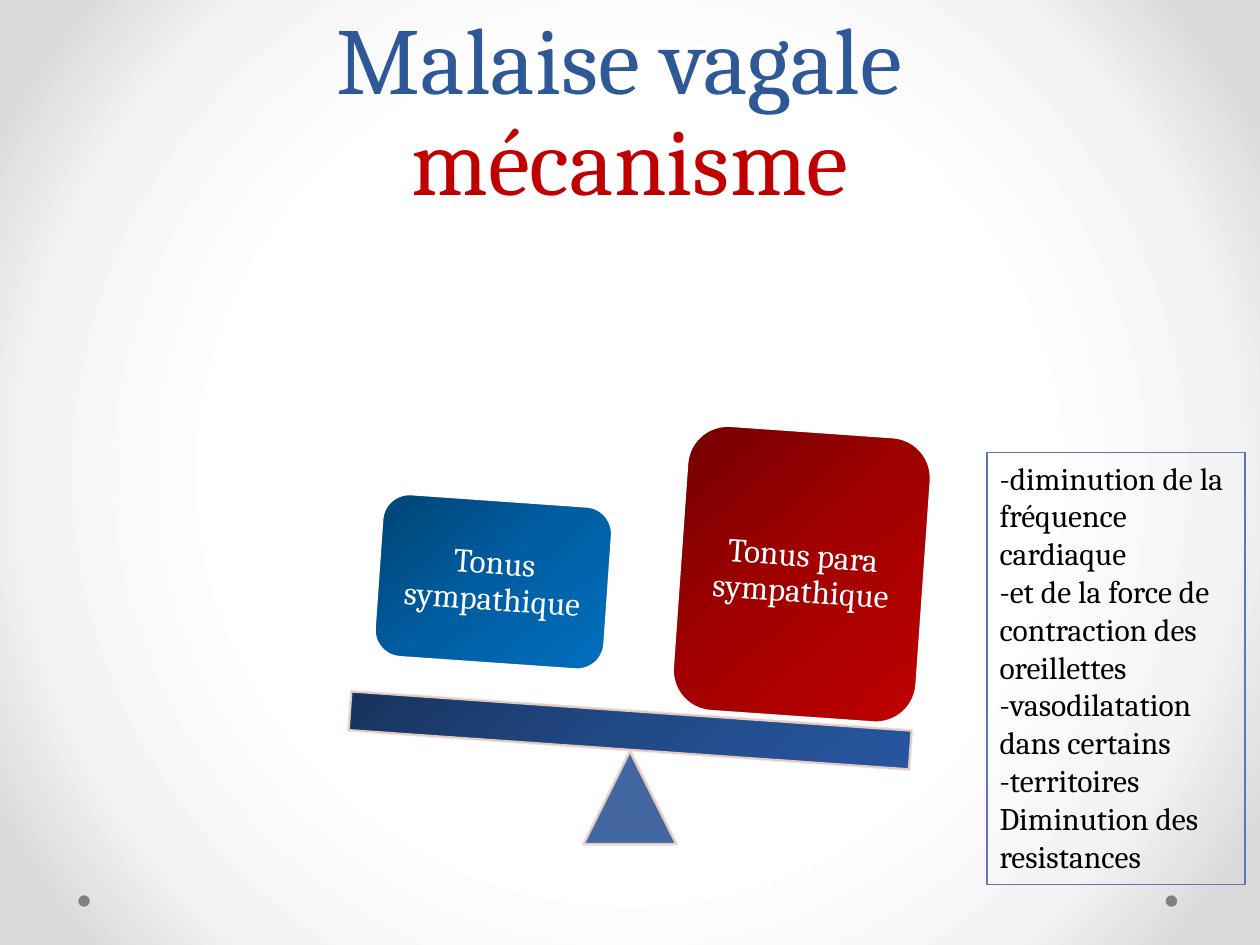
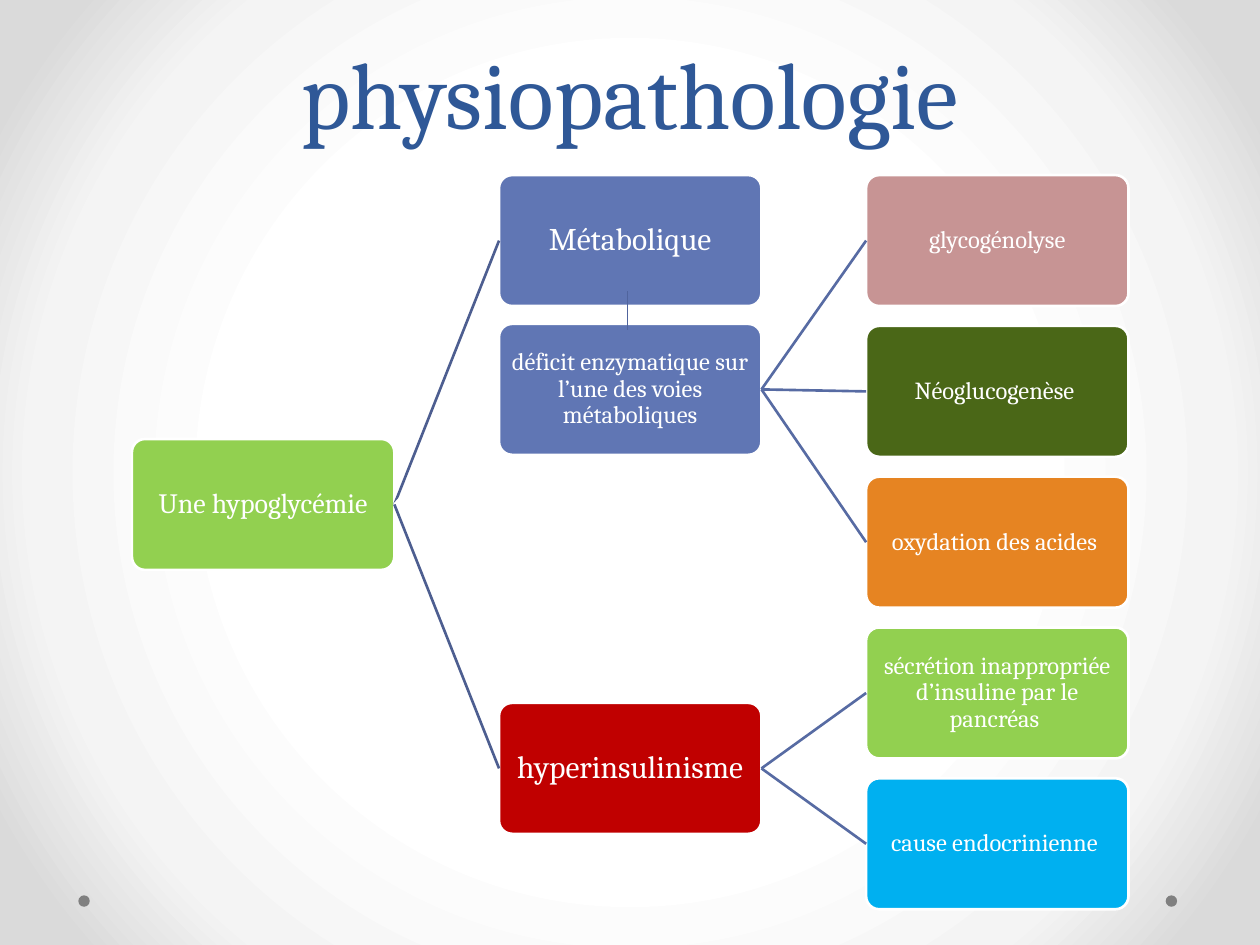
from lxml import etree
from pptx import Presentation
from pptx.dml.color import RGBColor
from pptx.enum.shapes import MSO_CONNECTOR, MSO_SHAPE
from pptx.enum.text import MSO_ANCHOR, PP_ALIGN
from pptx.oxml.ns import qn
from pptx.util import Cm, Pt

STRAIGHT = MSO_CONNECTOR.STRAIGHT
ROUNDED, RECTANGLE = MSO_SHAPE.ROUNDED_RECTANGLE, MSO_SHAPE.RECTANGLE
TRIANGLE, OVAL = MSO_SHAPE.ISOSCELES_TRIANGLE, MSO_SHAPE.OVAL
CENTER, LEFT = PP_ALIGN.CENTER, PP_ALIGN.LEFT
TOP, MIDDLE, BOTTOM = MSO_ANCHOR.TOP, MSO_ANCHOR.MIDDLE, MSO_ANCHOR.BOTTOM

# Shared look
FONT = "Cambria"
WHITE, BLACK, GREY = "FFFFFF", "000000", "808080"
NAVY, BLUE, RED, GREEN = "2F5897", "6076B4", "C00000", "92D050"
DARK_LINK, LINK = "4D5E90", "576BA3"
BACKDROP = [(50, WHITE), (76, "F4F4F4"), (92, "DADADA")]
RADIAL = {"path": "circle"}
SITE_LEFT, SITE_RIGHT = 1, 3

# Slide 1: tilt of the seesaw in degrees
TILT = 4

# Slide 2: tree grid in cm
BOX_WIDTH, BOX_HEIGHT = 5.29, 2.64
COLUMNS = [2.66 + 7.4 * i for i in range(3)]
ROWS = [3.53 + 3.04 * i for i in range(5)]


def color(value):
    return RGBColor.from_string(value)


def set_gradient(fill, holder, stops, radial=False):
    """Swap the solid fill inside holder for a gradient of (percent, colour)."""
    fill.solid()
    solid = holder.find(qn("a:solidFill"))
    gradient = etree.Element(qn("a:gradFill"), rotWithShape="1")
    stop_list = etree.SubElement(gradient, qn("a:gsLst"))
    for percent, value in stops:
        stop = etree.SubElement(stop_list, qn("a:gs"), pos=str(percent * 1000))
        etree.SubElement(stop, qn("a:srgbClr"), val=value)
    if radial:
        shade = etree.SubElement(gradient, qn("a:path"), path="circle")
        sides = dict.fromkeys("ltrb", "50000")
        etree.SubElement(shade, qn("a:fillToRect"), **sides)
    else:
        etree.SubElement(gradient, qn("a:lin"), ang="2700000", scaled="0")
    holder.replace(solid, gradient)


def fade(element):
    """Make every colour inside the element 90 % opaque."""
    for value in element.iter(qn("a:srgbClr")):
        etree.SubElement(value, qn("a:alpha"), val="90000")


def format_text(shape, lines, size, ink, align, anchor, spacing=None):
    frame = shape.text_frame
    frame.word_wrap = True
    frame.vertical_anchor = anchor
    frame.text = lines
    for para in frame.paragraphs:
        para.alignment = align
        para.line_spacing = spacing
        for span in para.runs:
            span.font.name = FONT
            span.font.size = Pt(size)
            span.font.color.rgb = color(ink)


def add_shape(page, kind, left, top, width, height, fill, line=None):
    """Add a preset shape; fill is one colour or a list of gradient stops."""
    shape = page.shapes.add_shape(kind, Cm(left), Cm(top), Cm(width), Cm(height))
    shape.shadow.inherit = False
    if isinstance(fill, list):
        set_gradient(shape.fill, shape._element.spPr, fill)
    else:
        shape.fill.solid()
        shape.fill.fore_color.rgb = color(fill)
    if line:
        shape.line.color.rgb = color(line)
        shape.line.width = Pt(1.5)
    else:
        shape.line.fill.background()
    return shape


def add_label(shape, text, size, inset):
    frame = shape.text_frame
    frame.margin_left = frame.margin_right = Cm(inset)
    frame.margin_top = frame.margin_bottom = Cm(inset)
    format_text(shape, text, size, WHITE, CENTER, MIDDLE, 0.9)


def add_line(page, x1, y1, x2, y2, ink, width=1.5):
    line = page.shapes.add_connector(STRAIGHT, Cm(x1), Cm(y1), Cm(x2), Cm(y2))
    line.line.color.rgb = color(ink)
    line.line.width = Pt(width)
    etree.SubElement(line._element.spPr, qn("a:effectLst"))
    return line


def add_link(page, parent, child, ink):
    link = add_line(page, 0, 0, 1, 1, ink)
    link.begin_connect(parent, SITE_RIGHT)
    link.end_connect(child, SITE_LEFT)


def add_page(deck, title, title_height):
    """Add a slide with the backdrop, the two footer dots and the title."""
    page = deck.slides.add_slide(deck.slide_layouts[6])
    fill = page.background.fill
    fill.solid()
    holder = next(page._element.iter(qn("p:bgPr")))
    set_gradient(fill, holder, BACKDROP, radial=True)
    for left in (1.58, 23.5):
        add_shape(page, OVAL, left, 18.05, 0.23, 0.23, GREY)
    box = page.shapes.add_textbox(Cm(1.27), Cm(0), Cm(22.86), Cm(title_height))
    format_text(box, title, 54, NAVY, CENTER, BOTTOM, Pt(58))
    return page, box


def add_weight(page, left, top, width, height, stops, text):
    weight = add_shape(page, ROUNDED, left, top, width, height, stops, WHITE)
    weight.rotation = TILT
    add_label(weight, text, 19, 0.2)


def add_node(page, column, top, fill, text, size):
    node = add_shape(page, ROUNDED, COLUMNS[column], top,
                     BOX_WIDTH, BOX_HEIGHT, fill, WHITE)
    node.adjustments[0] = 0.1
    add_label(node, text, size, 0.03)
    return node


def build_mechanism(deck):
    page, title = add_page(deck, "Malaise vagale \vmécanisme", 4.45)
    title.text_frame.paragraphs[0].runs[1].font.color.rgb = color(RED)

    # Seesaw
    pivot = add_shape(page, TRIANGLE, 11.76, 15.14, 1.88, 1.88, NAVY, "EFD4CD")
    fade(pivot._element.spPr)
    beam_stops = [(0, "17335E"), (50, "214986"), (100, "27569F")]
    beam = add_shape(page, RECTANGLE, 7.04, 14.33, 11.33, 0.79,
                     beam_stops, "F5D9CC")
    beam.rotation = TILT
    fade(beam._element.spPr.find(qn("a:ln")))

    # Weights
    add_weight(page, 7.62, 10.08, 4.65, 3.3,
               [(0, "004272"), (50, "005EA2"), (100, "0070C0")],
               "Tonus sympathique")
    add_weight(page, 13.7, 8.69, 4.93, 5.77,
               [(0, "720000"), (50, "A20000"), (100, RED)],
               "Tonus para sympathique")

    # Effects
    effects = page.shapes.add_textbox(Cm(19.9), Cm(9.12), Cm(5.2), Cm(8.71))
    effects.line.color.rgb = color(BLUE)
    effects.line.width = Pt(0.75)
    lines = ["-diminution de la fréquence cardiaque",
             "-et de la force de contraction des oreillettes",
             "-vasodilatation dans certains -territoires",
             "Diminution des resistances"]
    format_text(effects, "\n".join(lines), 18, BLACK, LEFT, TOP)


def build_physiopathology(deck):
    page, _ = add_page(deck, "physiopathologie", 3.12)

    # Root and causes; a parent sits midway between its outer children
    excess_top = (ROWS[3] + ROWS[4]) / 2
    root_top = (ROWS[0] + excess_top) / 2
    root = add_node(page, 0, root_top, GREEN, "Une hypoglycémie", 16)
    metabolic = add_node(page, 1, ROWS[0], BLUE, "Métabolique", 18)
    deficit = add_node(page, 1, 6.53, BLUE,
                       "déficit enzymatique sur l’une des voies métaboliques", 14)
    excess = add_node(page, 1, excess_top, RED, "hyperinsulinisme", 18)
    for cause, ink in ((metabolic, DARK_LINK), (deficit, WHITE),
                       (excess, DARK_LINK)):
        add_link(page, root, cause, ink)

    # Details
    details = [(deficit, "C79494", "glycogénolyse"),
               (deficit, "4A6717", "Néoglucogenèse "),
               (deficit, "E68422", "oxydation des acides "),
               (excess, GREEN, "sécrétion inappropriée d’insuline par le pancréas "),
               (excess, "00B0F0", "cause endocrinienne ")]
    for top, (cause, fill, text) in zip(ROWS, details):
        add_link(page, cause, add_node(page, 2, top, fill, text, 14), LINK)

    add_line(page, 12.65, 5.87, 12.65, 6.65, "50649D", 1)


def main():
    deck = Presentation()
    deck.slide_width, deck.slide_height = Cm(25.4), Cm(19.05)
    build_mechanism(deck)
    build_physiopathology(deck)
    deck.save("out.pptx")


if __name__ == "__main__":
    main()
